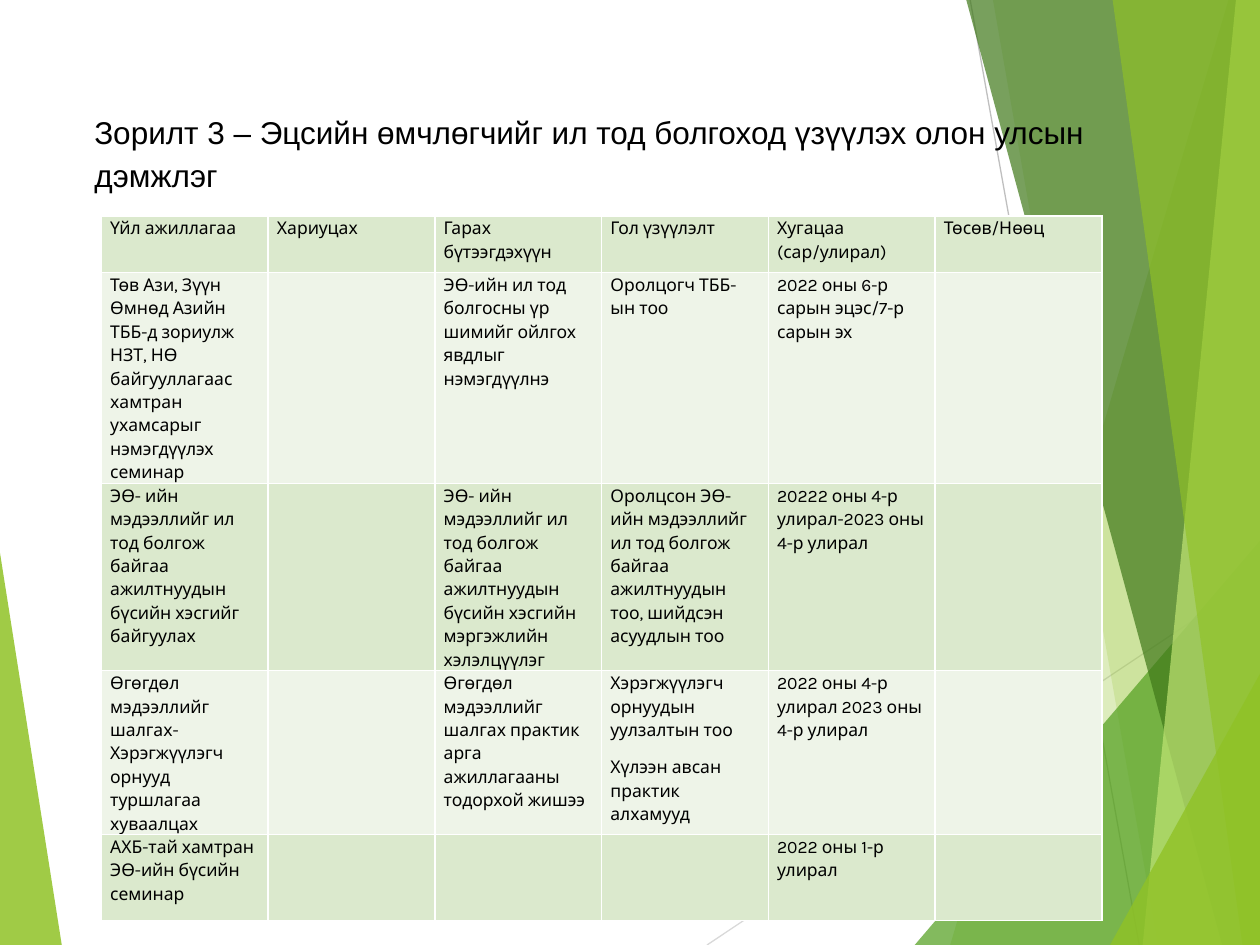
from lxml import etree
from pptx import Presentation
from pptx import util as u
from pptx.dml import color
from pptx.enum import text
from pptx.enum import shapes
from pptx.oxml import ns

Pt = u.Pt
BLACK = color.RGBColor(0x00, 0x00, 0x00)
WHITE = color.RGBColor(0xFF, 0xFF, 0xFF)
LIME = color.RGBColor(0x90, 0xC2, 0x26)
GREEN = color.RGBColor(0x54, 0xA0, 0x21)
FOREST = color.RGBColor(0x3F, 0x78, 0x19)
PALE_LIME = color.RGBColor(0xC0, 0xE4, 0x74)
LIGHT_GREY = color.RGBColor(0xD9, 0xD9, 0xD9)
GREY = color.RGBColor(0xBF, 0xBF, 0xBF)
ROW_TINTS = [color.RGBColor(0xDB, 0xE9, 0xCD), color.RGBColor(0xEE, 0xF4, 0xE8)]

TITLE = "Зорилт 3 – Эцсийн өмчлөгчийг ил тод болгоход үзүүлэх олон улсын дэмжлэг"
ROW_HEIGHTS = [32.4, 100.8, 102.2, 80, 49]
PLAN = [
    ["Үйл ажиллагаа", "Хариуцах", "Гарах бүтээгдэхүүн", "Гол үзүүлэлт",
     "Хугацаа (сар/улирал)", "Төсөв/Нөөц"],
    ["Төв Ази, Зүүн Өмнөд Азийн ТББ-д зориулж НЗТ, НӨ байгууллагаас хамтран "
     "ухамсарыг нэмэгдүүлэх семинар", "",
     "ЭӨ-ийн ил тод болгосны үр шимийг ойлгох явдлыг нэмэгдүүлнэ",
     "Оролцогч ТББ-ын тоо", "2022 оны 6-р сарын эцэс/7-р сарын эх", ""],
    ["ЭӨ- ийн мэдээллийг ил тод болгож байгаа ажилтнуудын бүсийн хэсгийг байгуулах", "",
     "ЭӨ- ийн мэдээллийг ил тод болгож байгаа ажилтнуудын бүсийн хэсгийн "
     "мэргэжлийн хэлэлцүүлэг",
     "Оролцсон ЭӨ- ийн мэдээллийг ил тод болгож байгаа ажилтнуудын тоо, "
     "шийдсэн асуудлын тоо",
     "20222 оны 4-р улирал-2023 оны 4-р улирал", ""],
    ["Өгөгдөл мэдээллийг шалгах- Хэрэгжүүлэгч орнууд туршлагаа хуваалцах", "",
     "Өгөгдөл мэдээллийг шалгах практик арга ажиллагааны тодорхой жишээ",
     "Хэрэгжүүлэгч орнуудын уулзалтын тоо\nХүлээн авсан практик алхамууд",
     "2022 оны 4-р улирал 2023 оны 4-р улирал", ""],
    ["АХБ-тай хамтран ЭӨ-ийн бүсийн семинар", "", "", "", "2022 оны 1-р улирал", ""],
]


def add_facet(group, points, fill_color, opacity):
    corners = [(Pt(x), Pt(y)) for x, y in points]
    builder = group.shapes.build_freeform(*corners[0])
    builder.add_line_segments(corners[1:], close=True)
    shape = builder.convert_to_shape()
    shape.shadow.inherit = False
    shape.fill.solid()
    shape.fill.fore_color.rgb = fill_color
    shape.line.fill.background()
    tint = shape._element.spPr.find(ns.qn("a:solidFill"))[0]
    etree.SubElement(tint, ns.qn("a:alpha")).set("val", str(opacity * 1000))


def add_ray(group, start, end, line_color):
    ends = [Pt(value) for value in (*start, *end)]
    connector = group.shapes.add_connector(shapes.MSO_CONNECTOR.STRAIGHT, *ends)
    connector.line.color.rgb = line_color
    connector.line.width = Pt(0.75)
    etree.SubElement(connector._element.spPr, ns.qn("a:effectLst"))


def add_backdrop(slide, left, top, width, height):
    right, bottom = left + width, top + height
    group = slide.shapes.add_group_shape()
    add_facet(group, [(left, top + 316), (left + 35.3, bottom), (left, bottom)], LIME, 85)
    add_ray(group, (right - 316, bottom), (right, top + 329), LIGHT_GREY)
    add_ray(group, (right - 165.6, top), (right - 69, bottom), GREY)
    bands = [
        (18, 177, LIME, 30),
        (152.6, 58.3, LIME, 20),
        (None, 197.3, GREEN, 72),
        (167.8, 21.6, FOREST, 70),
        (13.7, 67, PALE_LIME, 70),
        (84.2, 10, LIME, 65),
        (None, 85.7, LIME, 80),
    ]
    rises = iter([309, 385])
    for top_inset, bottom_inset, fill_color, opacity in bands:
        base = [(right - bottom_inset, bottom), (right, bottom)]
        if top_inset is None:
            points = base + [(right, top + next(rises))]
        else:
            points = [(right - top_inset, top)] + base + [(right, top)]
        add_facet(group, points, fill_color, opacity)


def add_title(slide, left, top, width, height):
    box = slide.shapes.add_textbox(Pt(left), Pt(top), Pt(width), Pt(height))
    frame = box.text_frame
    frame.word_wrap = True
    frame.auto_size = text.MSO_AUTO_SIZE.SHAPE_TO_FIT_TEXT
    paragraph = frame.paragraphs[0]
    paragraph.space_before = Pt(12)
    add_run(paragraph, TITLE, "Arial", 18)


def add_run(paragraph, words, font_name, size):
    paragraph.line_spacing = 1.15
    run = paragraph.add_run()
    run.text = words
    run.font.name = font_name
    run.font.size = Pt(size)
    run.font.color.rgb = BLACK


def add_borders(cell):
    properties = cell._tc.get_or_add_tcPr()
    for index, side in enumerate(("lnL", "lnR", "lnT", "lnB")):
        border = etree.Element(ns.qn(f"a:{side}"), w=str(Pt(1)))
        fill = etree.SubElement(border, ns.qn("a:solidFill"))
        etree.SubElement(fill, ns.qn("a:srgbClr"), val=str(WHITE))
        properties.insert(index, border)


def fill_cell(cell, words, tint):
    cell.margin_left = cell.margin_right = Pt(5)
    cell.margin_top = cell.margin_bottom = 0
    cell.fill.solid()
    cell.fill.fore_color.rgb = tint
    add_borders(cell)
    if not words:
        return
    frame = cell.text_frame
    for index, line in enumerate(words.split("\n")):
        paragraph = frame.add_paragraph() if index else frame.paragraphs[0]
        paragraph.space_after = Pt(8)
        add_run(paragraph, line, "Karla", 10)


def add_plan_table(slide, left, top, width, height):
    frame = slide.shapes.add_table(
        len(PLAN), len(PLAN[0]), Pt(left), Pt(top), Pt(width), Pt(height))
    table = frame.table
    for row_index, (row_height, row_words) in enumerate(zip(ROW_HEIGHTS, PLAN)):
        table.rows[row_index].height = Pt(row_height)
        for column_index, words in enumerate(row_words):
            fill_cell(table.cell(row_index, column_index), words, ROW_TINTS[row_index % 2])


def main():
    presentation = Presentation()
    presentation.slide_width = Pt(720)
    presentation.slide_height = Pt(540)
    slide = presentation.slides.add_slide(presentation.slide_layouts[6])
    add_backdrop(slide, 0, 0, 720, 540)
    add_plan_table(slide, 58, 123.3, 571.8, sum(ROW_HEIGHTS))
    add_title(slide, 46.8, 57.6, 626.4, 55.4)
    presentation.save("out.pptx")


if __name__ == "__main__":
    main()
